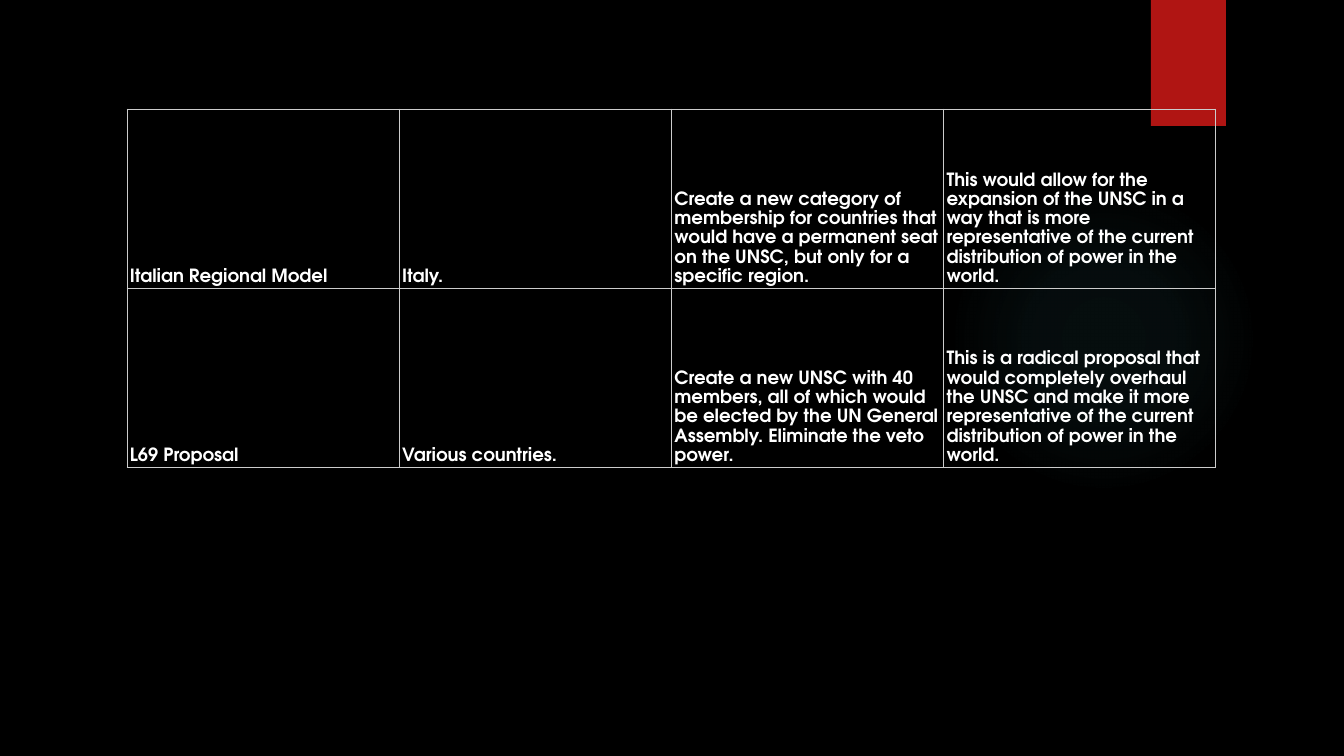
from lxml import etree
from pptx import Presentation
from pptx.dml.color import RGBColor
from pptx.enum.shapes import MSO_SHAPE
from pptx.enum.text import MSO_ANCHOR
from pptx.oxml import parse_xml
from pptx.oxml.ns import nsdecls, qn
from pptx.util import Pt

PROPOSALS = [
    ("Italian Regional Model", "Italy.",
     "Create a new category of membership for countries that would have a permanent seat "
     "on the UNSC, but only for a specific region.",
     "This would allow for the expansion of the UNSC in a way that is more representative "
     "of the current distribution of power in the world."),
    ("L69 Proposal", "Various countries.",
     "Create a new UNSC with 40 members, all of which would be elected by the UN General "
     "Assembly. Eliminate the veto power.",
     "This is a radical proposal that would completely overhaul the UNSC and make it more "
     "representative of the current distribution of power in the world."),
]
FONT = "TeX Gyre Adventor"
BLACK = RGBColor(0x00, 0x00, 0x00)
WHITE = RGBColor(0xFF, 0xFF, 0xFF)
RED = RGBColor(0xB0, 0x15, 0x13)
TEAL = RGBColor(0x50, 0xB9, 0xC1)
BORDER = RGBColor(0xCC, 0xCC, 0xCC)
GLOW_STOPS = [(0, 7), (36, 6), (69, 0)]  # position %, opacity %
RECTANGLE, OVAL = MSO_SHAPE.RECTANGLE, MSO_SHAPE.OVAL
BOTTOM = MSO_ANCHOR.BOTTOM

# Lengths in px
SLIDE_SIZE = (1344, 756)
GLOW = (949, 184, 310, 310)
RIBBON = (1151, 0, 75, 126)
TABLE = (127, 109, 1089, 358)
MARGIN_X, MARGIN_Y = 3, 2


def px(length):
    return round(length * 914400 / 100.8)


def add_plain_shape(slide, kind, frame):
    shape = slide.shapes.add_shape(kind, *map(px, frame))
    shape.shadow.inherit = False
    shape.line.fill.background()
    return shape


def add_glow(slide):
    glow = add_plain_shape(slide, OVAL, GLOW)
    stops = "".join(
        f'<a:gs pos="{position * 1000}"><a:srgbClr val="{TEAL}">'
        f'<a:alpha val="{opacity * 1000}"/></a:srgbClr></a:gs>'
        for position, opacity in GLOW_STOPS)
    gradient = parse_xml(
        f'<a:gradFill {nsdecls("a")} rotWithShape="1"><a:gsLst>{stops}</a:gsLst>'
        '<a:path path="circle"><a:fillToRect l="50000" t="50000" r="50000" b="50000"/>'
        '</a:path></a:gradFill>')
    glow.element.spPr.find(qn("a:prstGeom")).addnext(gradient)


def add_ribbon(slide):
    ribbon = add_plain_shape(slide, RECTANGLE, RIBBON)
    ribbon.fill.solid()
    ribbon.fill.fore_color.rgb = RED
    effects = ribbon.element.spPr.find(qn("a:effectLst"))
    effects.append(parse_xml(
        f'<a:outerShdw {nsdecls("a")} blurRad="{Pt(3)}" dist="{Pt(2)}" dir="5400000" '
        f'rotWithShape="0"><a:srgbClr val="{BLACK}"><a:alpha val="45000"/></a:srgbClr>'
        '</a:outerShdw>'))


def add_borders(cell):
    properties = cell._tc.get_or_add_tcPr()
    for index, side in enumerate(("lnL", "lnR", "lnT", "lnB")):
        line = etree.Element(qn(f"a:{side}"), w=str(Pt(0.75)))
        fill = etree.SubElement(line, qn("a:solidFill"))
        etree.SubElement(fill, qn("a:srgbClr"), val=str(BORDER))
        properties.insert(index, line)


def fill_cell(cell, text):
    cell.fill.background()
    add_borders(cell)
    cell.vertical_anchor = BOTTOM
    cell.margin_left = cell.margin_right = px(MARGIN_X)
    cell.margin_top = cell.margin_bottom = px(MARGIN_Y)
    para = cell.text_frame.paragraphs[0]
    para.text = text
    para.line_spacing = 1.15
    font = para.runs[0].font
    font.name, font.size, font.bold = FONT, Pt(13), True
    font.color.rgb = WHITE


def add_proposal_table(slide):
    frame = slide.shapes.add_table(len(PROPOSALS), len(PROPOSALS[0]), *map(px, TABLE))
    table = frame.table
    table.first_row = table.horz_banding = False
    for row, texts in zip(table.rows, PROPOSALS):
        for cell, text in zip(row.cells, texts):
            fill_cell(cell, text)


def main():
    deck = Presentation()
    deck.slide_width, deck.slide_height = map(px, SLIDE_SIZE)
    slide = deck.slides.add_slide(deck.slide_layouts[6])
    slide.background.fill.solid()
    slide.background.fill.fore_color.rgb = BLACK
    add_glow(slide)
    add_ribbon(slide)
    add_proposal_table(slide)
    deck.save("out.pptx")


if __name__ == "__main__":
    main()
